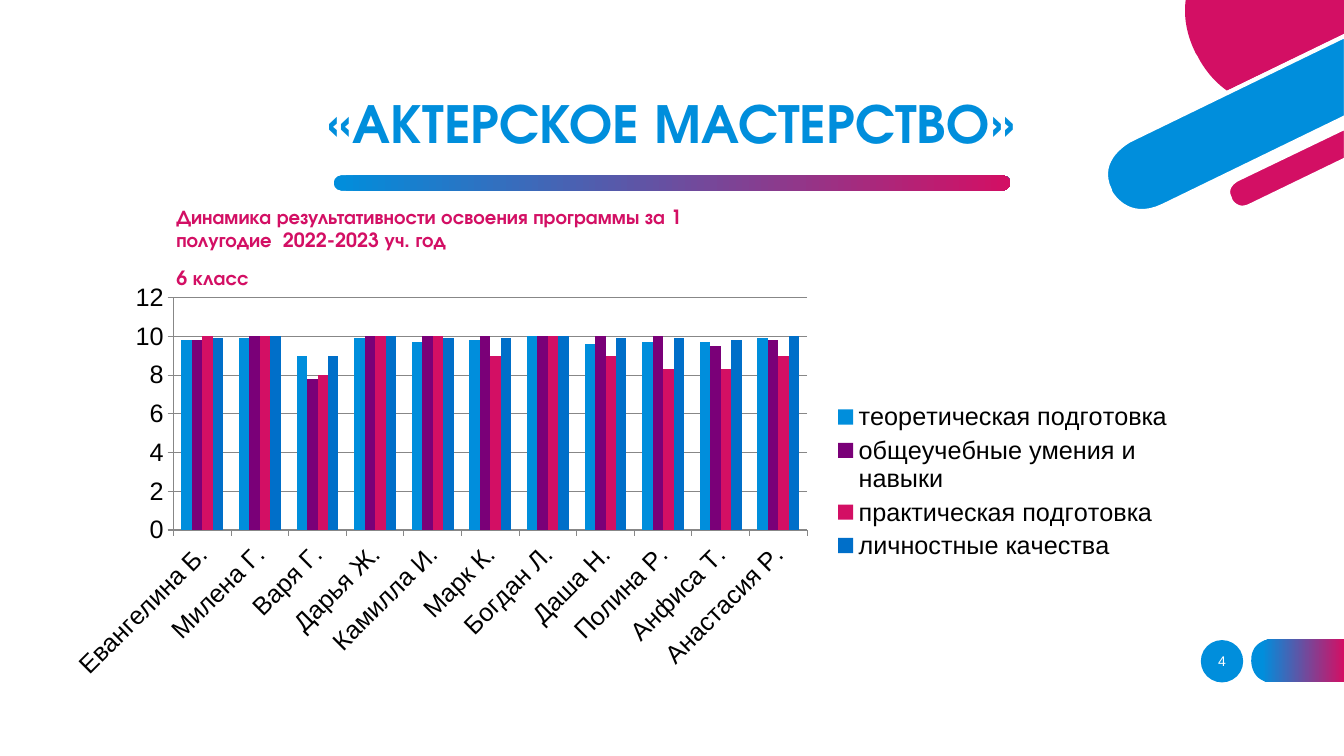
from pptx import Presentation
from pptx.chart.data import CategoryChartData
from pptx.dml.color import RGBColor
from pptx.enum.chart import XL_CHART_TYPE, XL_LEGEND_POSITION, XL_TICK_MARK
from pptx.enum.shapes import MSO_SHAPE
from pptx.enum.text import MSO_ANCHOR, PP_ALIGN
from pptx.util import Inches, Pt

COLUMNS = XL_CHART_TYPE.COLUMN_CLUSTERED
LEGEND_RIGHT = XL_LEGEND_POSITION.RIGHT
TICK_OUTSIDE = XL_TICK_MARK.OUTSIDE
ELLIPSE = MSO_SHAPE.OVAL
ROUNDED = MSO_SHAPE.ROUNDED_RECTANGLE
TOP, MIDDLE, BOTTOM = MSO_ANCHOR.TOP, MSO_ANCHOR.MIDDLE, MSO_ANCHOR.BOTTOM
LEFT, CENTER = PP_ALIGN.LEFT, PP_ALIGN.CENTER

THEME = {
    "blue": RGBColor.from_string("008EDC"),
    "purple": RGBColor.from_string("7A0078"),
    "crimson": RGBColor.from_string("D30F64"),
    "navy": RGBColor.from_string("006FC9"),
    "white": RGBColor.from_string("FFFFFF"),
    "black": RGBColor.from_string("000000"),
    "grid": RGBColor.from_string("878787"),
    "heading_font": "TeX Gyre Adventor",
    "body_font": "Arial",
    "title_size": Pt(40),
    "subtitle_size": Pt(14),
    "chart_size": Pt(18),
    "number_size": Pt(10),
    "stripe_border": Pt(3),
}

TITLE = "«АКТЕРСКОЕ МАСТЕРСТВО»"
SUBTITLES = [
    "Динамика результативности освоения программы за 1 полугодие  2022-2023 уч. год",
    "6 класс",
]
SLIDE_NUMBER = "4"
STUDENTS = [
    "Евангелина Б.", "Милена Г.", "Варя Г.", "Дарья Ж.", "Камилла И.", "Марк К.",
    "Богдан Л.", "Даша Н.", "Полина Р.", "Анфиса Т.", "Анастасия Р.",
]
SCORES = [
    ("теоретическая подготовка", "blue",
     (9.8, 9.9, 9, 9.9, 9.7, 9.8, 10, 9.6, 9.7, 9.7, 9.9)),
    ("общеучебные умения и навыки", "purple",
     (9.8, 10, 7.8, 10, 10, 10, 10, 10, 10, 9.5, 9.8)),
    ("практическая подготовка", "crimson",
     (10, 10, 8, 10, 10, 9, 10, 9, 8.3, 8.3, 9)),
    ("личностные качества", "navy",
     (9.9, 10, 9, 10, 9.9, 9.9, 10, 9.9, 9.9, 9.8, 10)),
]

CORNER_DISC = [
    (11.88, 0.56), (11.88, 0.56, 11.97, 0.76, 12.17, 0.9), (13.33, 0.34),
    (13.33, 0), (11.76, 0), (11.74, 0.15, 11.76, 0.33, 11.86, 0.53),
]
WIDE_STRIPE = [
    (11.21, 1.39), (11.21, 1.39, 10.85, 1.57, 11.01, 1.89),
    (11.01, 1.9), (11.01, 1.9, 11.17, 2.22, 11.54, 2.04),
    (13.35, 1.16), (13.35, 0.35),
]
THIN_STRIPE = [
    (12.27, 1.78), (12.27, 1.78, 12.13, 1.85, 12.2, 1.97),
    (12.2, 1.98), (12.2, 1.98, 12.26, 2.11, 12.4, 2.04),
    (13.35, 1.58), (13.35, 1.26),
]
NUMBER_TAIL = [
    (12.62, 6.77), (13.33, 6.77), (13.33, 6.34), (12.62, 6.34),
    (12.62, 6.34, 12.41, 6.34, 12.41, 6.55),
    (12.41, 6.56), (12.41, 6.56, 12.41, 6.77, 12.62, 6.77),
]
CORNER_PARTS = [
    (CORNER_DISC, "crimson", False),
    (WIDE_STRIPE, "blue", True),
    (THIN_STRIPE, "crimson", True),
]


def box(*lengths):
    return [Inches(length) for length in lengths]


def outline_points(segments, steps=16):
    points = [segments[0]]
    for segment in segments[1:]:
        if len(segment) == 2:
            points.append(segment)
            continue
        anchors = [points[-1], segment[:2], segment[2:4], segment[4:]]
        for step in range(1, steps + 1):
            t = step / steps
            weights = ((1 - t) ** 3, 3 * t * (1 - t) ** 2, 3 * t * t * (1 - t), t ** 3)
            points.append(tuple(
                sum(weight * anchor[axis] for weight, anchor in zip(weights, anchors))
                for axis in (0, 1)))
    return points


def paint(shape, color):
    shape.shadow.inherit = False
    shape.line.fill.background()
    shape.fill.solid()
    shape.fill.fore_color.rgb = THEME[color]


def paint_gradient(shape, start):
    paint(shape, "blue")
    shape.fill.gradient()
    shape.fill.gradient_angle = 0
    for stop, color, position in zip(
            shape.fill.gradient_stops, ("blue", "crimson"), (start, 1)):
        stop.color.rgb = THEME[color]
        stop.position = position


def add_outline(shapes, segments):
    points = [box(*point) for point in outline_points(segments)]
    builder = shapes.build_freeform(*points[0])
    builder.add_line_segments(points[1:])
    return builder.convert_to_shape()


def write(shape, lines, size, font_name, color, bold, align, anchor):
    frame = shape.text_frame
    frame.word_wrap = True
    frame.vertical_anchor = anchor
    frame.text = "\n".join(lines)
    for paragraph in frame.paragraphs:
        paragraph.alignment = align
        font = paragraph.font
        font.name, font.size, font.bold = font_name, THEME[size], bold
        font.color.rgb = THEME[color]
    return frame


def add_scores_chart(shapes):
    data = CategoryChartData()
    data.categories = STUDENTS
    for name, _, values in SCORES:
        data.add_series(name, values)
    chart = shapes.add_chart(COLUMNS, *box(0.5, 2.73, 11.24, 4.09), data).chart
    chart.has_title = False
    chart.font.name = THEME["body_font"]
    chart.font.size = THEME["chart_size"]
    chart.font.color.rgb = THEME["black"]
    chart.has_legend = True
    chart.legend.position = LEGEND_RIGHT
    chart.legend.include_in_layout = False
    plot = chart.plots[0]
    plot.gap_width = 150
    plot.overlap = 0
    plot.vary_by_categories = False
    for series, (_, color, _) in zip(plot.series, SCORES):
        series.format.fill.solid()
        series.format.fill.fore_color.rgb = THEME[color]
    for axis in (chart.category_axis, chart.value_axis):
        axis.major_tick_mark = TICK_OUTSIDE
        axis.format.line.color.rgb = THEME["grid"]
    scale = chart.value_axis
    scale.minimum_scale, scale.maximum_scale, scale.major_unit = 0, 12, 2
    scale.major_gridlines.format.line.color.rgb = THEME["grid"]


def main():
    presentation = Presentation()
    presentation.slide_width, presentation.slide_height = box(13.33, 7.5)
    slide = presentation.slides.add_slide(presentation.slide_layouts[6])
    shapes = slide.shapes

    badge = shapes.add_shape(ELLIPSE, *box(11.91, 6.35, 0.42, 0.42))
    paint(badge, "blue")
    frame = write(badge, [SLIDE_NUMBER], "number_size", THEME["body_font"],
                  "white", False, CENTER, MIDDLE)
    frame.margin_left = frame.margin_right = 0
    paint_gradient(add_outline(shapes, NUMBER_TAIL), 0.12)

    underline = shapes.add_shape(ROUNDED, *box(3.31, 1.74, 6.71, 0.15))
    underline.adjustments[0] = 0.5
    paint_gradient(underline, 0)

    for segments, color, bordered in CORNER_PARTS:
        part = add_outline(shapes, segments)
        paint(part, color)
        if bordered:
            part.line.color.rgb = THEME["white"]
            part.line.width = THEME["stripe_border"]

    title = shapes.add_textbox(*box(0.91, 0.85, 11.5, 0.74))
    frame = write(title, [TITLE], "title_size", THEME["heading_font"],
                  "blue", True, CENTER, BOTTOM)
    frame.paragraphs[0].line_spacing = 0.9

    subtitle = shapes.add_textbox(*box(1.65, 1.98, 5.78, 0.56))
    frame = write(subtitle, SUBTITLES, "subtitle_size", THEME["heading_font"],
                  "crimson", True, LEFT, TOP)
    for paragraph in frame.paragraphs:
        paragraph.space_before = Pt(10)

    add_scores_chart(shapes)
    presentation.save("out.pptx")


if __name__ == "__main__":
    main()
